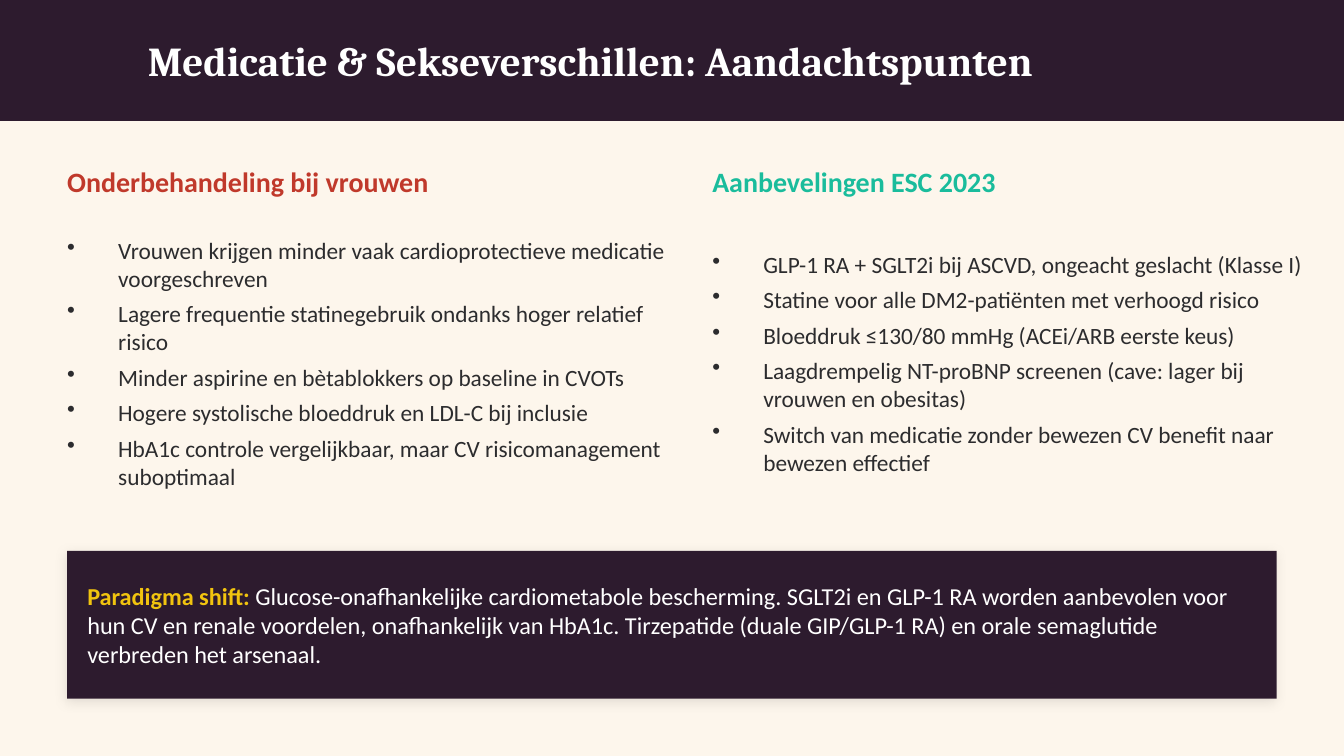
from dataclasses import dataclass

import pptx
import pptx.dml.color
import pptx.enum.shapes
import pptx.enum.text
import pptx.oxml
import pptx.oxml.ns
import pptx.util
from pptx.util import Inches


@dataclass(frozen=True)
class Theme:
    background: str = "FDF6EC"
    dark: str = "2D1B2E"
    light: str = "FFFFFF"
    body: str = "2C2C2E"
    red: str = "C0392B"
    teal: str = "1ABC9C"
    yellow: str = "F1C40F"
    heading_font: str = "Cambria"
    body_font: str = "Calibri"
    title_size: float = 22
    heading_size: float = 15
    list_size: float = 12.5
    callout_size: float = 13
    bullet_indent: float = 0.38
    bullet_gap: float = 4


@dataclass(frozen=True)
class Box:
    left: float
    top: float
    width: float
    height: float

    def lengths(self):
        return [Inches(value) for value in (self.left, self.top, self.width, self.height)]


@dataclass(frozen=True)
class Run:
    text: str
    color: str
    bold: bool = False


@dataclass(frozen=True)
class Column:
    left: float
    heading: str
    color: str
    points: tuple[str, ...]


THEME = Theme()

COLUMNS = (
    Column(0.5, "Onderbehandeling bij vrouwen", THEME.red, (
        "Vrouwen krijgen minder vaak cardioprotectieve medicatie voorgeschreven",
        "Lagere frequentie statinegebruik ondanks hoger relatief risico",
        "Minder aspirine en bètablokkers op baseline in CVOTs",
        "Hogere systolische bloeddruk en LDL-C bij inclusie",
        "HbA1c controle vergelijkbaar, maar CV risicomanagement suboptimaal",
    )),
    Column(5.3, "Aanbevelingen ESC 2023", THEME.teal, (
        "GLP-1 RA + SGLT2i bij ASCVD, ongeacht geslacht (Klasse I)",
        "Statine voor alle DM2-patiënten met verhoogd risico",
        "Bloeddruk ≤130/80 mmHg (ACEi/ARB eerste keus)",
        "Laagdrempelig NT-proBNP screenen (cave: lager bij vrouwen en obesitas)",
        "Switch van medicatie zonder bewezen CV benefit naar bewezen effectief",
    )),
)

CALLOUT = (
    Run("Paradigma shift: ", THEME.yellow, bold=True),
    Run("Glucose-onafhankelijke cardiometabole bescherming. SGLT2i en GLP-1 RA worden "
        "aanbevolen voor hun CV en renale voordelen, onafhankelijk van HbA1c. Tirzepatide "
        "(duale GIP/GLP-1 RA) en orale semaglutide verbreden het arsenaal.", THEME.light),
)


def rgb(color: str) -> pptx.dml.color.RGBColor:
    return pptx.dml.color.RGBColor.from_string(color)


def add_bullet(paragraph) -> None:
    properties = paragraph._p.get_or_add_pPr()
    indent = Inches(THEME.bullet_indent)
    properties.set("marL", str(indent))
    properties.set("indent", str(-indent))
    bullet = pptx.oxml.parse_xml(f'<a:buChar {pptx.oxml.ns.nsdecls("a")} char="•"/>')
    properties.append(bullet)
    paragraph.space_after = pptx.util.Pt(THEME.bullet_gap)


def add_text(slide, box: Box, paragraphs: list[tuple[Run, ...]], *, size: float,
             font: str = THEME.body_font, bullets: bool = False) -> None:
    """Add a vertically centred text box without margins, one tuple of runs a paragraph."""
    frame = slide.shapes.add_textbox(*box.lengths()).text_frame
    frame.word_wrap = True
    frame.vertical_anchor = pptx.enum.text.MSO_ANCHOR.MIDDLE
    frame.margin_left = frame.margin_top = frame.margin_right = frame.margin_bottom = 0
    for index, runs in enumerate(paragraphs):
        paragraph = frame.add_paragraph() if index else frame.paragraphs[0]
        if bullets:
            add_bullet(paragraph)
        for item in runs:
            run = paragraph.add_run()
            run.text = item.text
            run.font.name = font
            run.font.size = pptx.util.Pt(size)
            run.font.bold = item.bold
            run.font.color.rgb = rgb(item.color)


def add_panel(slide, box: Box, color: str):
    shape = slide.shapes.add_shape(pptx.enum.shapes.MSO_SHAPE.RECTANGLE, *box.lengths())
    shape.shadow.inherit = False
    shape.fill.solid()
    shape.fill.fore_color.rgb = rgb(color)
    shape.line.fill.background()
    return shape


def add_soft_shadow(shape) -> None:
    effects = shape._element.spPr.find(pptx.oxml.ns.qn("a:effectLst"))
    effects.append(pptx.oxml.parse_xml(
        f'<a:outerShdw {pptx.oxml.ns.nsdecls("a")} blurRad="{pptx.util.Pt(6)}" '
        f'dist="{pptx.util.Pt(2)}" dir="{135 * 60000}" algn="bl" rotWithShape="0">'
        '<a:srgbClr val="000000"><a:alpha val="10000"/></a:srgbClr></a:outerShdw>'))


def add_column(slide, column: Column) -> None:
    add_text(slide, Box(column.left, 1.15, 4.5, 0.4),
             [(Run(column.heading, column.color, bold=True),)], size=THEME.heading_size)
    add_text(slide, Box(column.left, 1.6, 4.5, 2.2),
             [(Run(point, THEME.body),) for point in column.points],
             size=THEME.list_size, bullets=True)


def main() -> None:
    presentation = pptx.Presentation()
    presentation.slide_width = Inches(10)
    presentation.slide_height = Inches(10 * 9 / 16)
    slide = presentation.slides.add_slide(presentation.slide_layouts[6])
    slide.background.fill.solid()
    slide.background.fill.fore_color.rgb = rgb(THEME.background)

    add_panel(slide, Box(0, 0, 10, 0.9), THEME.dark)
    add_text(slide, Box(1.1, 0.15, 8, 0.6),
             [(Run("Medicatie & Sekseverschillen: Aandachtspunten", THEME.light, bold=True),)],
             size=THEME.title_size, font=THEME.heading_font)
    for column in COLUMNS:
        add_column(slide, column)
    add_soft_shadow(add_panel(slide, Box(0.5, 4.1, 9, 1.1), THEME.dark))
    add_text(slide, Box(0.65, 4.1, 8.7, 1.1), [CALLOUT], size=THEME.callout_size)

    presentation.save("out.pptx")


if __name__ == "__main__":
    main()
